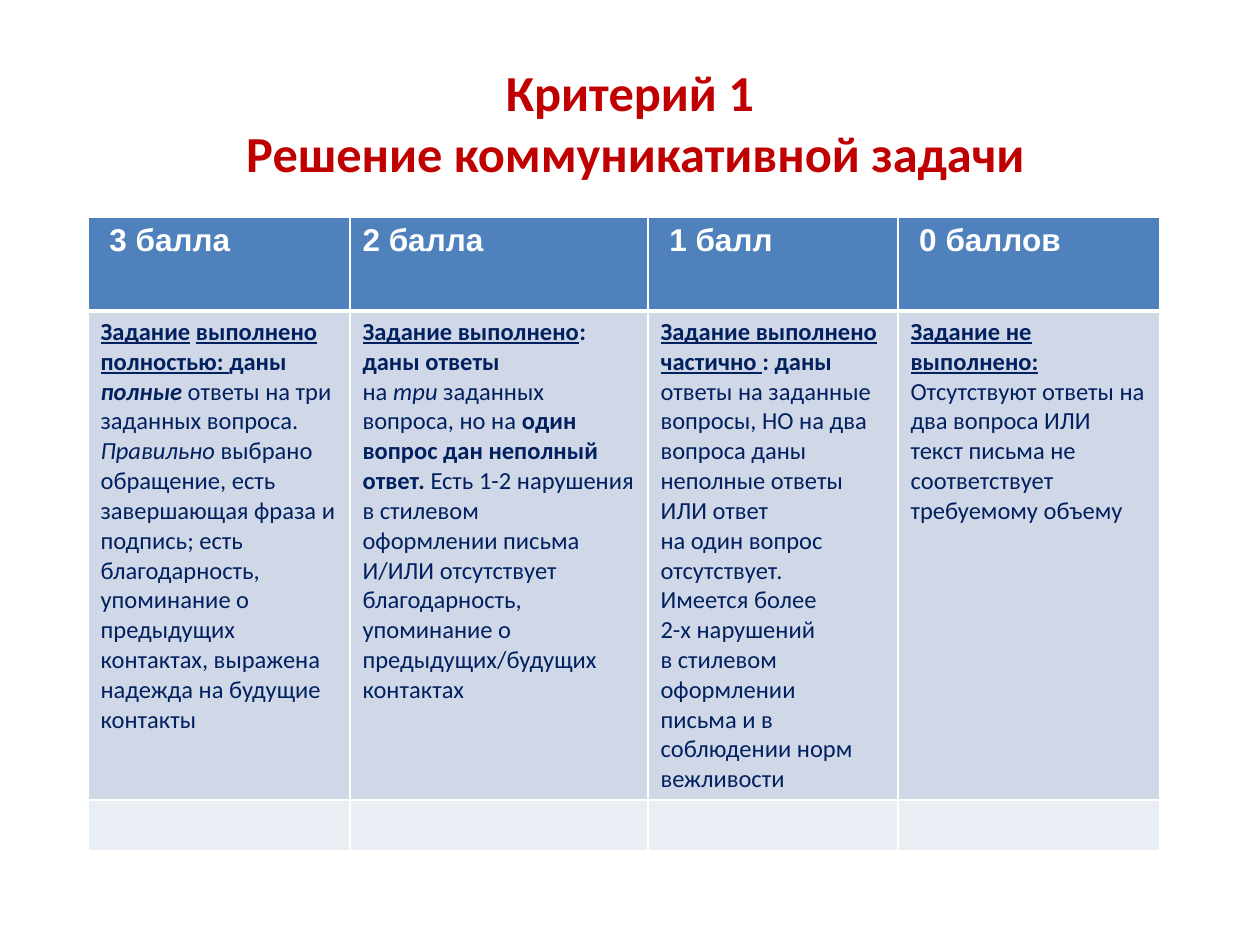
from lxml.etree import SubElement
from pptx import Presentation
from pptx.dml.color import RGBColor
from pptx.enum.text import MSO_ANCHOR, PP_ALIGN
from pptx.oxml.ns import qn
from pptx.util import Emu, Pt

PX = 914400 / 126
COLUMN_WIDTHS = [262, 298, 250, 262]
ROW_HEIGHTS = [94, 489, 51]
ROW_FILLS = ["4F81BD", "D0D8E8", "E9EDF4"]
HEADINGS = [" 3 балла", "2 балла", " 1 балл", " 0 баллов"]
CRITERIA = [
    [
        [("Задание", "bu"), (" ", "b"), ("выполнено", "bu"), (" ", "b"),
         ("полностью: ", "bu"), ("даны", "b")],
        [("полные", "bi"), (" ответы на три заданных вопроса.", "")],
        [("Правильно ", "i"),
         ("выбрано обращение, есть завершающая фраза и подпись; есть благодарность,", "")],
        [("упоминание о предыдущих", "")],
        [("контактах, выражена надежда на будущие", "")],
        [("контакты", "")],
    ],
    [
        [("Задание выполнено", "bu"), (": даны ответы", "b")],
        [("на ", ""), ("три", "i"), (" заданных вопроса, но на ", ""),
         ("один вопрос дан неполный ответ.", "b"), (" Есть 1-2 нарушения в стилевом", "")],
        [("оформлении письма И/ИЛИ отсутствует благодарность, "
          "упоминание о предыдущих/будущих контактах", "")],
    ],
    [
        [("Задание выполнено частично ", "bu"), (": даны ", "b"),
         ("ответы на заданные вопросы, НО на два", "")],
        [("вопроса даны", "")],
        [("неполные ответы ИЛИ ответ", "")],
        [("на один вопрос", "")],
        [("отсутствует.", "")],
        [("Имеется более", "")],
        [("2-х нарушений", "")],
        [("в стилевом", "")],
        [("оформлении", "")],
        [("письма и в соблюдении норм", "")],
        [("вежливости", "")],
    ],
    [
        [("Задание не", "bu")],
        [("выполнено:", "bu")],
        [("Отсутствуют ответы на два вопроса ИЛИ", "")],
        [("текст письма не соответствует требуемому объему", "")],
    ],
]


def color(value):
    return RGBColor.from_string(value)


def add_text(paragraph, text, size, fill, name="Calibri", style=""):
    run = paragraph.add_run()
    run.text = text
    font = run.font
    font.name, font.size = name, Pt(size)
    font.color.rgb = color(fill)
    font.bold, font.italic, font.underline = (letter in style for letter in "biu")


presentation = Presentation()
presentation.slide_width = Emu(round(1260 * PX))
presentation.slide_height = Emu(round(945 * PX))
slide = presentation.slides.add_slide(presentation.slide_layouts[6])

title = slide.shapes.add_textbox(*[Emu(round(length * PX)) for length in (63, 49, 1134, 146)])
title.text_frame.word_wrap = True
title.text_frame.vertical_anchor = MSO_ANCHOR.MIDDLE
paragraph = title.text_frame.paragraphs[0]
paragraph.alignment = PP_ALIGN.CENTER
add_text(paragraph, "Критерий 1", size=28.8, fill="C00000", style="b")
paragraph.add_line_break()
add_text(paragraph, " Решение коммуникативной задачи", size=28.8, fill="C00000", style="b")

bounds = (88, 217, sum(COLUMN_WIDTHS), sum(ROW_HEIGHTS))
table = slide.shapes.add_table(
    len(ROW_HEIGHTS), len(COLUMN_WIDTHS), *[Emu(round(length * PX)) for length in bounds]
).table
table.horz_banding = False
for column, width in zip(table.columns, COLUMN_WIDTHS):
    column.width = Emu(round(width * PX))

for row_index, (row, height) in enumerate(zip(table.rows, ROW_HEIGHTS)):
    row.height = Emu(round(height * PX))
    for cell in row.cells:
        properties = cell._tc.get_or_add_tcPr()
        for side in ("lnL", "lnR", "lnT", "lnB"):
            thick = (row_index, side) in ((0, "lnB"), (1, "lnT"))
            line = SubElement(properties, qn(f"a:{side}"), w=str(Pt(3 if thick else 1)))
            fill = SubElement(line, qn("a:solidFill"))
            SubElement(fill, qn("a:srgbClr"), val="FFFFFF")
        cell.fill.solid()
        cell.fill.fore_color.rgb = color(ROW_FILLS[row_index])

for index, (heading, criterion) in enumerate(zip(HEADINGS, CRITERIA)):
    paragraph = table.cell(0, index).text_frame.paragraphs[0]
    add_text(paragraph, heading, size=18, fill="FFFFFF", name="Arial", style="b")
    text_frame = table.cell(1, index).text_frame
    for number, parts in enumerate(criterion):
        paragraph = text_frame.add_paragraph() if number else text_frame.paragraphs[0]
        for text, style in parts:
            add_text(paragraph, text, size=14, fill="002060", style=style)

presentation.save("out.pptx")
